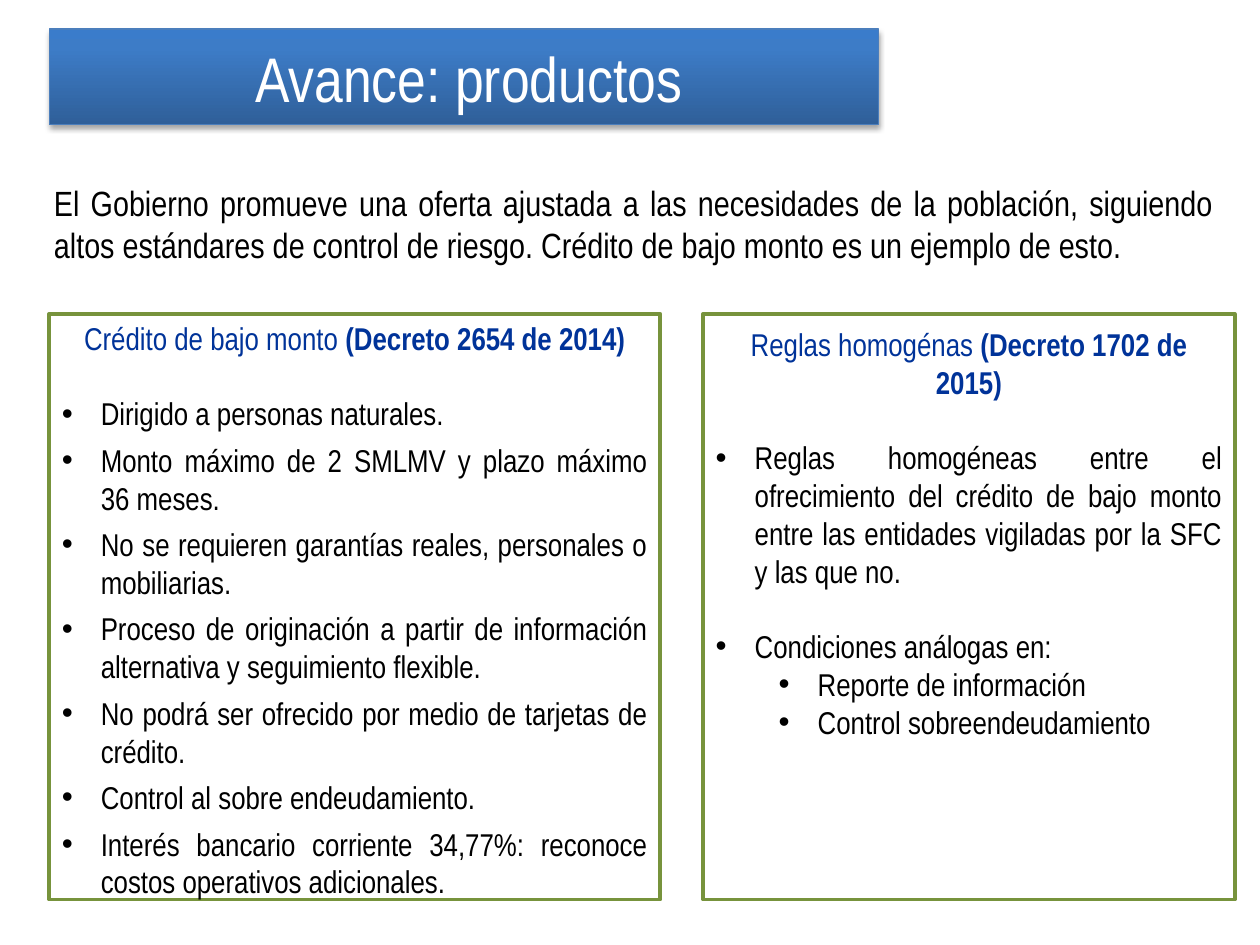
from copy import deepcopy
from dataclasses import dataclass

from lxml.etree import SubElement
from pptx import Presentation
from pptx.dml.color import RGBColor
from pptx.enum.text import MSO_ANCHOR, MSO_AUTO_SIZE, PP_ALIGN
from pptx.oxml.ns import qn
from pptx.shapes.base import BaseShape
from pptx.slide import Slide
from pptx.text.text import TextFrame, _Paragraph
from pptx.util import Inches, Pt


@dataclass(frozen=True)
class Theme:
    font: str = "Arial Narrow"
    title_size: int = 36
    intro_size: int = 20
    panel_size: int = 18
    white: str = "FFFFFF"
    black: str = "000000"
    heading: str = "003399"
    panel_border: str = "77933C"
    banner_dark: str = "2F5F99"
    banner_mid: str = "3D7CC7"
    banner_light: str = "3A7CCB"
    banner_border: str = "4B7EBC"


@dataclass(frozen=True)
class Box:
    left: float
    top: float
    width: float
    height: float


@dataclass(frozen=True)
class Item:
    text: str
    space_before: float
    indent: float = 0.31


@dataclass(frozen=True)
class Panel:
    box: Box
    top_margin: float
    topic: str
    decree: str
    items: tuple[Item, ...]


THEME = Theme()
HANGING = 0.31
BLANK_LINE = 21.5
ITEM_GAP = 5

BANNER = Box(0.39, 0.23, 6.58, 0.76)
INTRO = Box(0.33, 1.39, 9.4, 0.77)
INTRO_TEXT = (
    "El Gobierno promueve una oferta ajustada a las necesidades de la población, "
    "siguiendo altos estándares de control de riesgo. "
    "Crédito de bajo monto es un ejemplo de esto."
)
CREDIT_FEATURES = (
    "Dirigido a personas naturales.",
    "Monto máximo de 2 SMLMV y plazo máximo 36 meses.",
    "No se requieren garantías reales, personales o mobiliarias.",
    "Proceso de originación a partir de información alternativa y seguimiento flexible.",
    "No podrá ser ofrecido por medio de tarjetas de crédito.",
    "Control al sobre endeudamiento.",
    "Interés bancario corriente 34,77%: reconoce costos operativos adicionales.",
)
PANELS = (
    Panel(
        Box(0.39, 2.49, 4.85, 4.65), 0.04,
        "Crédito de bajo monto ", "(Decreto 2654 de 2014)",
        tuple(
            Item(feature, ITEM_GAP if position else BLANK_LINE)
            for position, feature in enumerate(CREDIT_FEATURES)
        ),
    ),
    Panel(
        Box(5.58, 2.49, 4.22, 4.65), 0.09,
        "Reglas homogénas ", "(Decreto 1702 de 2015)",
        (
            Item("Reglas homogéneas entre el ofrecimiento del crédito de bajo monto "
                 "entre las entidades vigiladas por la SFC y las que no.", BLANK_LINE),
            Item("Condiciones análogas en:", BLANK_LINE),
            Item("Reporte de información", 0, 0.81),
            Item("Control sobreendeudamiento", 0, 0.81),
        ),
    ),
)


def color(value: str) -> RGBColor:
    """Turn a hex value into a colour."""
    return RGBColor.from_string(value)


def place(shape: BaseShape, box: Box) -> None:
    """Move and size a shape."""
    shape.left, shape.top = Inches(box.left), Inches(box.top)
    shape.width, shape.height = Inches(box.width), Inches(box.height)


def outline(shape: BaseShape, value: str, width: float) -> None:
    """Give a shape a solid border."""
    shape.line.color.rgb = color(value)
    shape.line.width = Pt(width)


def prepare(frame: TextFrame, anchor: MSO_ANCHOR) -> _Paragraph:
    """Set wrapping and anchoring and return the first paragraph."""
    frame.word_wrap = True
    frame.auto_size = MSO_AUTO_SIZE.NONE
    frame.vertical_anchor = anchor
    return frame.paragraphs[0]


def add_run(paragraph: _Paragraph, text: str, size: int, value: str, bold: bool = False) -> None:
    """Append a formatted run."""
    run = paragraph.add_run()
    run.text = text
    run.font.name = THEME.font
    run.font.size = Pt(size)
    run.font.bold = bold
    run.font.color.rgb = color(value)


def set_bullet(paragraph: _Paragraph, indent: float) -> None:
    """Give a paragraph a hanging bullet, or none when the indent is zero."""
    properties = paragraph._p.get_or_add_pPr()
    properties.set("marL", str(Inches(indent)))
    properties.set("indent", str(-Inches(HANGING) if indent else 0))
    if indent:
        SubElement(properties, qn("a:buFont"), typeface="Arial")
        SubElement(properties, qn("a:buChar"), char="•")
    else:
        SubElement(properties, qn("a:buNone"))


def add_shadow(shape: BaseShape) -> None:
    """Add a soft shadow below a shape."""
    effects = SubElement(shape.element.spPr, qn("a:effectLst"))
    shadow = SubElement(
        effects, qn("a:outerShdw"), blurRad=str(Pt(3.1)), dist=str(Pt(1.8)),
        dir="5400000", rotWithShape="0",
    )
    tint = SubElement(shadow, qn("a:srgbClr"), val=THEME.black)
    SubElement(tint, qn("a:alpha"), val="35000")


def draw_banner(slide: Slide) -> None:
    """Draw the title on its gradient banner."""
    banner = slide.shapes.title
    place(banner, BANNER)
    banner.fill.gradient()
    banner.fill.gradient_angle = 90
    stop_list = banner.element.spPr.find(".//" + qn("a:gsLst"))
    stop_list.append(deepcopy(stop_list[-1]))
    shades = ((0, THEME.banner_dark), (0.8, THEME.banner_mid), (1, THEME.banner_light))
    for stop, (position, shade) in zip(banner.fill.gradient_stops, shades):
        stop.position = position
        stop.color.rgb = color(shade)
    outline(banner, THEME.banner_border, 0.75)
    add_shadow(banner)
    heading = prepare(banner.text_frame, MSO_ANCHOR.MIDDLE)
    banner.text_frame.margin_left = Inches(0.18)
    heading.alignment = PP_ALIGN.CENTER
    add_run(heading, "Avance: productos", THEME.title_size, THEME.white)


def draw_intro(slide: Slide) -> None:
    """Draw the introductory sentence."""
    intro = slide.shapes.add_textbox(0, 0, 0, 0)
    place(intro, INTRO)
    sentence = prepare(intro.text_frame, MSO_ANCHOR.TOP)
    sentence.alignment = PP_ALIGN.JUSTIFY
    add_run(sentence, INTRO_TEXT, THEME.intro_size, THEME.black)


def draw_panel(body: BaseShape, panel: Panel) -> None:
    """Fill a body placeholder with a heading and its bullets."""
    place(body, panel.box)
    body.fill.solid()
    body.fill.fore_color.rgb = color(THEME.white)
    outline(body, THEME.panel_border, 2)
    heading = prepare(body.text_frame, MSO_ANCHOR.TOP)
    body.text_frame.margin_top = Inches(panel.top_margin)
    set_bullet(heading, 0)
    heading.alignment = PP_ALIGN.CENTER
    heading.space_before = Pt(0)
    add_run(heading, panel.topic, THEME.panel_size, THEME.heading)
    add_run(heading, panel.decree, THEME.panel_size, THEME.heading, bold=True)
    for item in panel.items:
        entry = body.text_frame.add_paragraph()
        entry.level = 1 if item.indent > HANGING else 0
        set_bullet(entry, item.indent)
        entry.alignment = PP_ALIGN.JUSTIFY
        entry.space_before = Pt(item.space_before)
        add_run(entry, item.text, THEME.panel_size, THEME.black)


def main() -> None:
    """Build and save the slide."""
    deck = Presentation()
    deck.slide_width, deck.slide_height = Inches(10), Inches(7.5)
    slide = deck.slides.add_slide(deck.slide_layouts[3])
    draw_banner(slide)
    draw_intro(slide)
    for index, panel in enumerate(PANELS, start=1):
        draw_panel(slide.placeholders[index], panel)
    deck.save("out.pptx")


if __name__ == "__main__":
    main()
